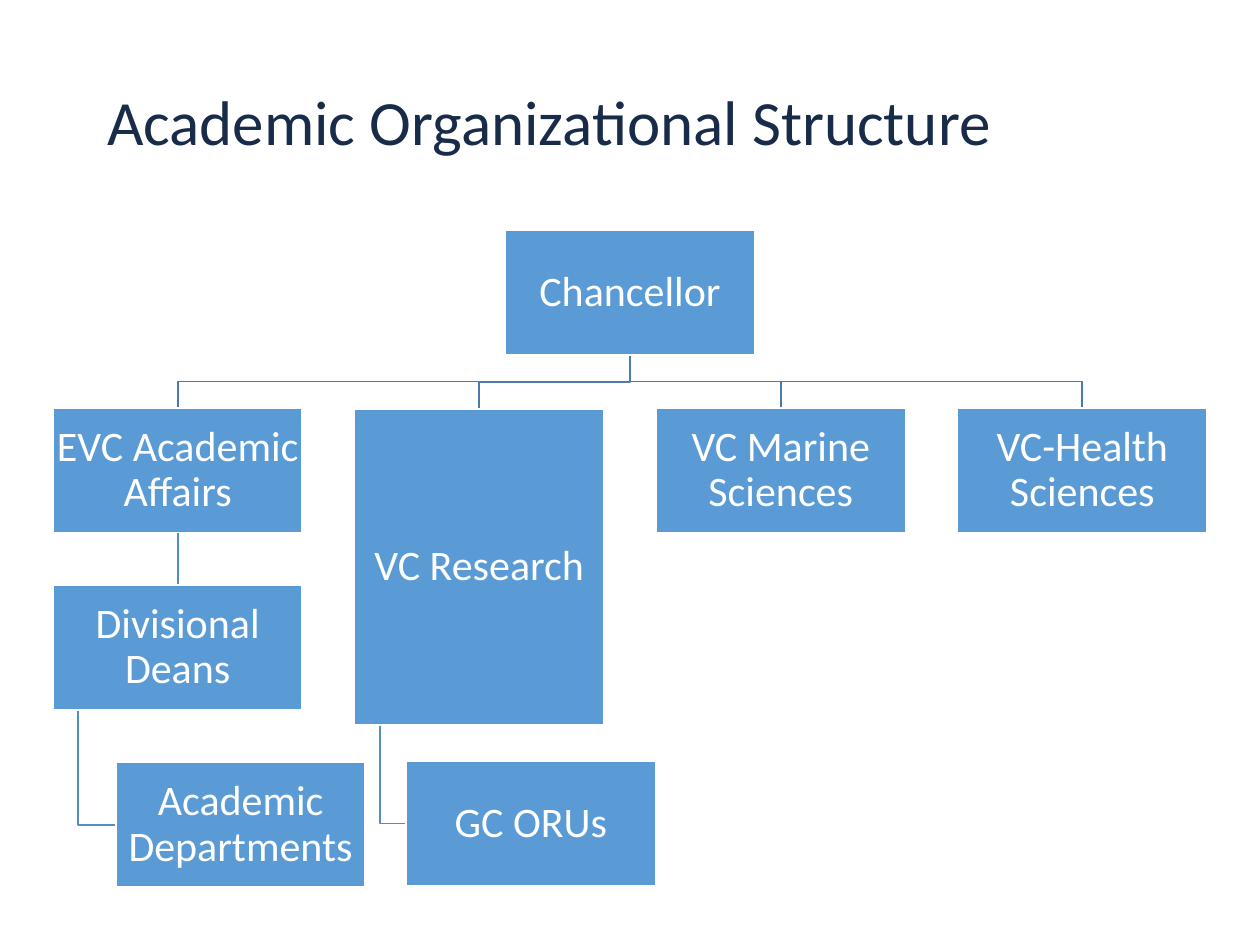
from lxml.etree import SubElement
from pptx import Presentation
from pptx.dml.color import RGBColor
from pptx.enum.shapes import MSO_CONNECTOR, MSO_SHAPE
from pptx.enum.text import MSO_ANCHOR, PP_ALIGN
from pptx.oxml.ns import qn
from pptx.util import Inches, Pt

COLORS = {
    "title": "182B49",
    "node": "5B9BD5",
    "white": "FFFFFF",
    "upper_link": "497CAB",
    "lower_link": "538DC1",
}
NODE_W, NODE_H = 1.98, 0.99
TOP, BOTTOM = 0, 2


def color(key):
    return RGBColor.from_string(COLORS[key])


def write_text(frame, text, *, size, fill, align, anchor, inset_x, inset_y):
    frame.word_wrap = True
    frame.vertical_anchor = anchor
    frame.margin_left = frame.margin_right = Inches(inset_x)
    frame.margin_top = frame.margin_bottom = Inches(inset_y)
    frame.text = text
    paragraph = frame.paragraphs[0]
    paragraph.alignment = align
    paragraph.line_spacing = 0.9
    paragraph.space_before = Pt(0)
    paragraph.font.name = "Calibri"
    paragraph.font.size = Pt(size)
    paragraph.font.color.rgb = color(fill)


def add_title(slide, left, top, width, height):
    title = slide.shapes.title
    title.left, title.top = Inches(left), Inches(top)
    title.width, title.height = Inches(width), Inches(height)
    write_text(title.text_frame, "Academic Organizational Structure", size=36, fill="title",
               align=PP_ALIGN.LEFT, anchor=MSO_ANCHOR.TOP, inset_x=0.1, inset_y=0.05)


def add_node(slide, text, left, top, height=NODE_H):
    node = slide.shapes.add_shape(MSO_SHAPE.RECTANGLE, Inches(left), Inches(top),
                                  Inches(NODE_W), Inches(height))
    node.shadow.inherit = False
    node.fill.solid()
    node.fill.fore_color.rgb = color("node")
    node.line.color.rgb = color("white")
    node.line.width = Pt(1)
    write_text(node.text_frame, text, size=24, fill="white", align=PP_ALIGN.CENTER,
               anchor=MSO_ANCHOR.MIDDLE, inset_x=0.02, inset_y=0.02)
    return node


def add_bent_link(slide, points, line_color):
    start, *rest = [(Inches(x), Inches(y)) for x, y in points]
    builder = slide.shapes.build_freeform(*start)
    builder.add_line_segments(rest, close=False)
    link = builder.convert_to_shape()
    link.shadow.inherit = False
    link.fill.background()
    link.line.color.rgb = color(line_color)
    link.line.width = Pt(1)


def add_straight_link(slide, x, top, bottom):
    link = slide.shapes.add_connector(MSO_CONNECTOR.STRAIGHT, Inches(x), Inches(top),
                                      Inches(x), Inches(bottom))
    link.line.color.rgb = color("lower_link")
    link.line.width = Pt(1)
    SubElement(link._element.spPr, qn("a:effectLst"))
    return link


def add_org_chart(slide, left, top, width, height):
    columns = [left + i * (width - NODE_W) / 3 for i in range(4)]
    rows = [top + i * (height - NODE_H) / 3 for i in range(4)]
    affairs_x, research_x, marine_x, health_x = columns
    chancellor_y, vice_y, deans_y, departments_y = rows
    chancellor_x = left + (width - NODE_W) / 2
    departments_x = affairs_x + 0.5
    research_y, research_h = vice_y + 0.01, 2.51
    units_x = research_x + 0.41
    units_y = departments_y - 0.01

    start_x, start_y = chancellor_x + NODE_W / 2, chancellor_y + NODE_H
    for x, y in ((health_x, vice_y), (marine_x, vice_y),
                 (research_x, research_y), (affairs_x, vice_y)):
        end_x, middle_y = x + NODE_W / 2, (start_y + y) / 2
        add_bent_link(slide, [(start_x, start_y), (start_x, middle_y),
                              (end_x, middle_y), (end_x, y)], "upper_link")

    for parent_x, parent_bottom, child_x, child_y in (
            (research_x, research_y + research_h, units_x, units_y),
            (affairs_x, deans_y + NODE_H, departments_x, departments_y)):
        drop_x, end_y = parent_x + 0.2, child_y + NODE_H / 2
        add_bent_link(slide, [(drop_x, parent_bottom), (drop_x, end_y),
                              (child_x, end_y)], "lower_link")

    deans_link = add_straight_link(slide, affairs_x + NODE_W / 2, vice_y + NODE_H, deans_y)

    add_node(slide, "Chancellor", chancellor_x, chancellor_y)
    affairs = add_node(slide, "EVC Academic Affairs", affairs_x, vice_y)
    deans = add_node(slide, "Divisional Deans", affairs_x, deans_y)
    add_node(slide, "Academic Departments", departments_x, departments_y)
    add_node(slide, "VC Research", research_x, research_y, research_h)
    add_node(slide, "GC ORUs", units_x, units_y)
    add_node(slide, "VC Marine Sciences", marine_x, vice_y)
    add_node(slide, "VC-Health Sciences", health_x, vice_y)

    deans_link.begin_connect(affairs, BOTTOM)
    deans_link.end_connect(deans, TOP)


def main():
    presentation = Presentation()
    presentation.slide_width, presentation.slide_height = Inches(10), Inches(7.5)
    slide = presentation.slides.add_slide(presentation.slide_layouts[5])
    add_title(slide, 0.75, 0.67, 8.62, 1.15)
    add_org_chart(slide, 0.42, 1.83, 9.16, 5.21)
    presentation.save("out.pptx")


if __name__ == "__main__":
    main()
